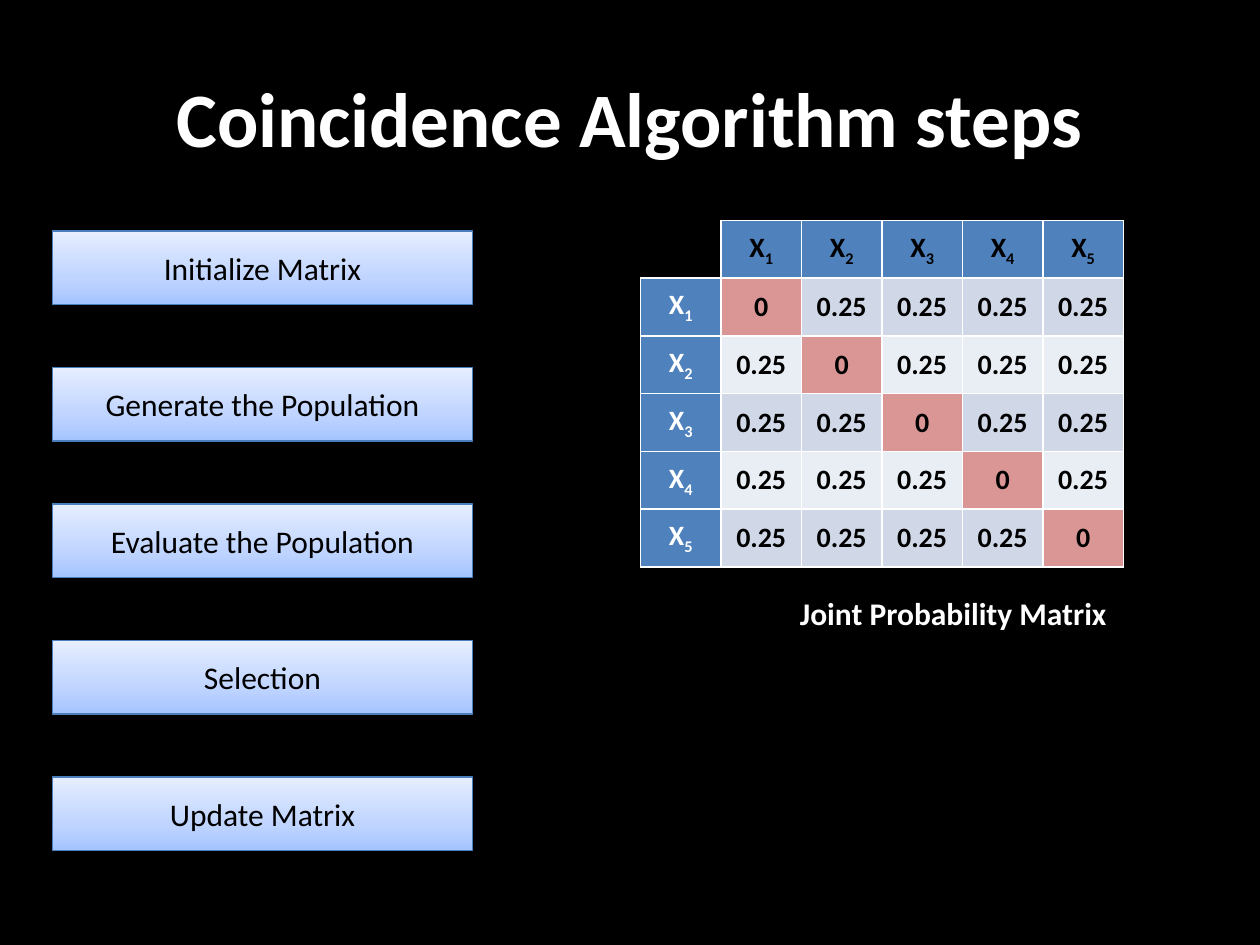
from copy import deepcopy
from dataclasses import dataclass

from lxml import etree
from pptx import Presentation
from pptx.dml.color import RGBColor
from pptx.enum.shapes import MSO_CONNECTOR, MSO_SHAPE
from pptx.enum.text import MSO_ANCHOR, MSO_AUTO_SIZE, PP_ALIGN
from pptx.oxml.ns import qn
from pptx.util import Pt

STRAIGHT, ELBOW = MSO_CONNECTOR.STRAIGHT, MSO_CONNECTOR.ELBOW
RECTANGLE = MSO_SHAPE.RECTANGLE
MIDDLE = MSO_ANCHOR.MIDDLE
FIT_TEXT = MSO_AUTO_SIZE.SHAPE_TO_FIT_TEXT
CENTER, LEFT = PP_ALIGN.CENTER, PP_ALIGN.LEFT
RIGHT_SIDE = 3
TITLE_ONLY = 5


@dataclass(frozen=True)
class Theme:
    font: str = "Calibri"
    dark: str = "000000"
    light: str = "FFFFFF"
    header: str = "4F81BD"
    diagonal: str = "D99694"
    bands: tuple = ("D0D8E8", "E9EDF4")
    step_gradient: tuple = ((0, "A4C4FF"), (0.35, "BFD4FF"), (1, "E6EEFF"))
    step_outline: str = "4B7EBC"
    title_size: int = 44
    text_size: int = 18
    cell_size: int = 16


THEME = Theme()
STEPS = ["Initialize Matrix", "Generate the Population",
         "Evaluate the Population", "Selection", "Update Matrix"]
LOOP_START, LOOP_END = STEPS.index("Update Matrix"), STEPS.index("Generate the Population")
VARIABLES = 5

STEP_HEIGHT = 42
ARROW_LIFT = 6      # each arrow starts and ends this far above the gap
LOOP_REACH = 35.25  # how far the loop bends out to the right
LOOP_WIDTH = 0.12   # the bend is a share of the width, which must not be zero


def rgb(value):
    return RGBColor.from_string(value)


def set_values(target, values):
    for name, value in values.items():
        setattr(target, name, value)


def write(frame, text, size, color, bold=False, align=CENTER, subscript=""):
    paragraph = frame.paragraphs[0]
    paragraph.alignment = align
    for part in filter(None, (text, subscript)):
        run = paragraph.add_run()
        run.text = part
        set_values(run.font, {"name": THEME.font, "size": Pt(size), "bold": bold})
        run.font.color.rgb = rgb(color)
    if subscript:
        run._r.get_or_add_rPr().set("baseline", "-25000")


def add_title(slide, text, left, top, width, height):
    title = slide.shapes.title
    set_values(title, {"left": Pt(left), "top": Pt(top),
                       "width": Pt(width), "height": Pt(height)})
    title.text_frame.vertical_anchor = MIDDLE
    write(title.text_frame, text, THEME.title_size, THEME.light, bold=True)


def add_arrow(slide, kind, x1, y1, x2, y2):
    arrow = slide.shapes.add_connector(kind, Pt(x1), Pt(y1), Pt(x2), Pt(y2))
    arrow.line.width = Pt(3)
    arrow.line.color.rgb = rgb(THEME.dark)
    properties = arrow._element.spPr
    etree.SubElement(properties.find(qn("a:ln")), qn("a:tailEnd"), type="arrow")
    etree.SubElement(properties, qn("a:effectLst"))
    return arrow


def fill_gradient(shape, stops):
    """Run the stops from the bottom edge to the top edge."""
    shape.fill.gradient()
    shape.fill.gradient_angle = 90
    stop_list = shape._element.spPr.find(".//" + qn("a:gsLst"))
    while len(stop_list) < len(stops):
        stop_list.append(deepcopy(stop_list[-1]))
    for stop, (position, color) in zip(shape.fill.gradient_stops, stops):
        stop.position = position
        stop.color.rgb = rgb(color)


def add_step(slide, label, left, top, width, height):
    step = slide.shapes.add_shape(RECTANGLE, Pt(left), Pt(top), Pt(width), Pt(height))
    step.shadow.inherit = False
    fill_gradient(step, THEME.step_gradient)
    step.line.color.rgb = rgb(THEME.step_outline)
    step.line.width = Pt(0.75)
    step.text_frame.vertical_anchor = MIDDLE
    write(step.text_frame, label, THEME.text_size, THEME.dark)
    return step


def join_loop(loop, start, end):
    """Join two right sides and bend the loop outwards."""
    loop.begin_connect(start, RIGHT_SIDE)
    loop.end_connect(end, RIGHT_SIDE)
    loop.width = Pt(LOOP_WIDTH)
    guides = loop._element.spPr.find(qn("a:prstGeom")).get_or_add_avLst()
    bend = round(LOOP_REACH / LOOP_WIDTH * 100000)
    etree.SubElement(guides, qn("a:gd"), name="adj1", fmla=f"val {bend}")


def add_flow(slide, left, top, width, height):
    """Stack the steps over their arrows, with a loop back to an earlier step."""
    pitch = (height - STEP_HEIGHT) / (len(STEPS) - 1)
    gap = pitch - STEP_HEIGHT
    tops = [top + pitch * i for i in range(len(STEPS))]
    center, right = left + width / 2, left + width

    for step_top in tops[:-1]:
        start = step_top + STEP_HEIGHT - ARROW_LIFT
        add_arrow(slide, STRAIGHT, center, start, center, start + gap)
    loop = add_arrow(slide, ELBOW, right, tops[LOOP_START] + STEP_HEIGHT / 2,
                     right, tops[LOOP_END] + STEP_HEIGHT / 2)

    steps = [add_step(slide, label, left, step_top, width, STEP_HEIGHT)
             for label, step_top in zip(STEPS, tops)]
    join_loop(loop, steps[LOOP_START], steps[LOOP_END])


def set_borders(cell, visible_sides):
    """Draw the visible sides and clear the others."""
    properties = cell._tc.get_or_add_tcPr()
    for side in "LRTB":
        border = etree.SubElement(properties, qn(f"a:ln{side}"), w=str(Pt(1)))
        if side in visible_sides:
            solid = etree.SubElement(border, qn("a:solidFill"))
            etree.SubElement(solid, qn("a:srgbClr"), val=THEME.light)
        else:
            etree.SubElement(border, qn("a:noFill"))


def cell_content(row, column):
    """Return text, subscript, text colour and fill for a place in the matrix."""
    if row == 0:
        return "X", str(column), THEME.dark, THEME.header
    if column == 0:
        return "X", str(row), THEME.light, THEME.header
    if row == column:
        return "0", "", THEME.dark, THEME.diagonal
    return "0.25", "", THEME.dark, THEME.bands[(row - 1) % 2]


def format_cell(cell, row, column):
    if row == column == 0:
        set_borders(cell, "RB")
        cell.fill.background()
        return
    text, subscript, color, fill = cell_content(row, column)
    set_borders(cell, "LRTB")
    cell.fill.solid()
    cell.fill.fore_color.rgb = rgb(fill)
    cell.vertical_anchor = MIDDLE
    write(cell.text_frame, text, THEME.cell_size, color, bold=True, subscript=subscript)


def add_matrix(slide, left, top, width, height):
    size = VARIABLES + 1
    matrix = slide.shapes.add_table(size, size, Pt(left), Pt(top),
                                    Pt(width), Pt(height)).table
    set_values(matrix, {"first_row": False, "horz_banding": False})
    for column in matrix.columns:
        column.width = Pt(width / size)
    for row in matrix.rows:
        row.height = Pt(height / size)
    for row in range(size):
        for column in range(size):
            format_cell(matrix.cell(row, column), row, column)


def add_caption(slide, text, left, top, width, height):
    caption = slide.shapes.add_textbox(Pt(left), Pt(top), Pt(width), Pt(height))
    set_values(caption.text_frame, {"word_wrap": False, "auto_size": FIT_TEXT})
    write(caption.text_frame, text, THEME.text_size, THEME.light, bold=True, align=LEFT)


def main():
    deck = Presentation()
    set_values(deck, {"slide_width": Pt(720), "slide_height": Pt(540)})
    slide = deck.slides.add_slide(deck.slide_layouts[TITLE_ONLY])
    slide.background.fill.solid()
    slide.background.fill.fore_color.rgb = rgb(THEME.dark)
    add_title(slide, "Coincidence Algorithm steps", 36, 21.6, 648, 90)
    add_flow(slide, 30, 132, 240, 354)
    add_matrix(slide, 366, 126, 276, 198)
    add_caption(slide, "Joint Probability Matrix", 450, 336, 191.5, 29)
    deck.save("out.pptx")


if __name__ == "__main__":
    main()
